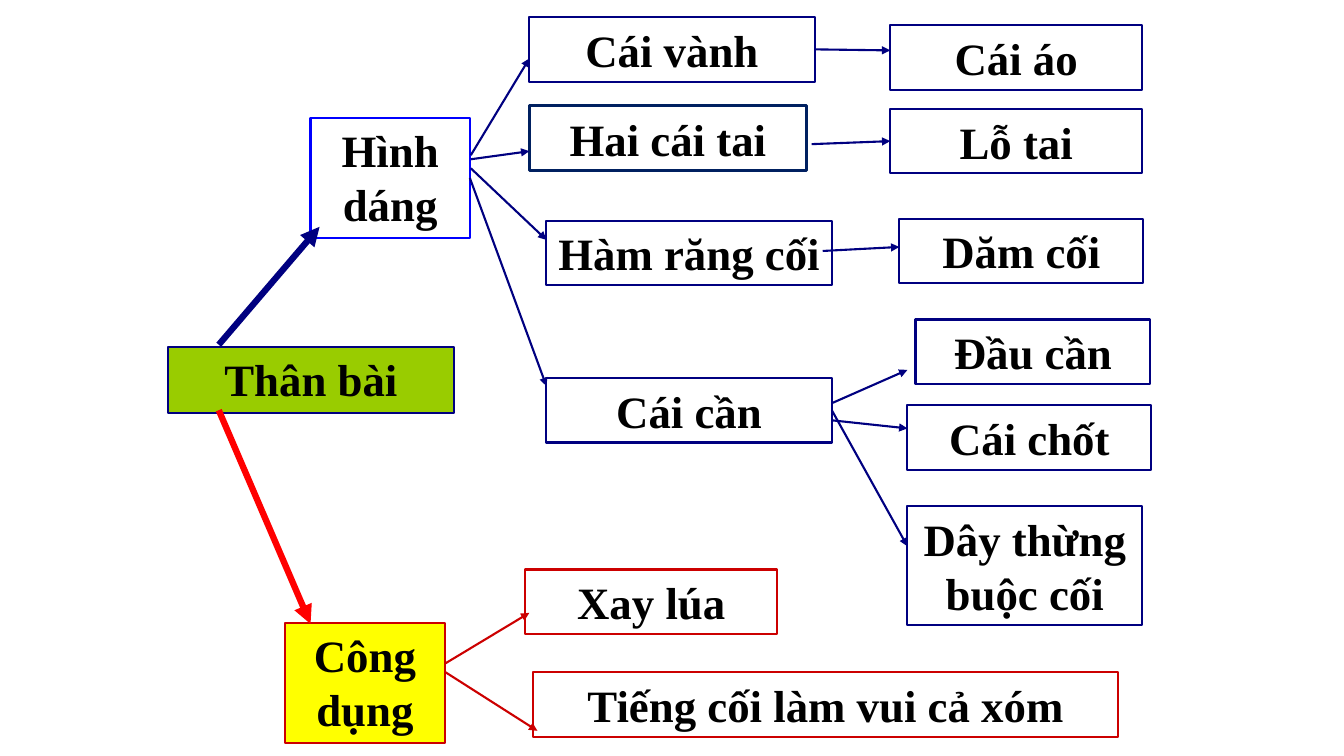
from dataclasses import dataclass

from lxml import etree
from pptx import Presentation
from pptx.dml.color import RGBColor
from pptx.enum.shapes import MSO_CONNECTOR, MSO_SHAPE
from pptx.enum.text import MSO_ANCHOR, MSO_AUTO_SIZE, PP_ALIGN
from pptx.oxml.ns import qn
from pptx.util import Inches, Pt

RECTANGLE = MSO_SHAPE.RECTANGLE
STRAIGHT = MSO_CONNECTOR.STRAIGHT
TOP, MIDDLE = MSO_ANCHOR.TOP, MSO_ANCHOR.MIDDLE
GROW = MSO_AUTO_SIZE.SHAPE_TO_FIT_TEXT
CENTER = PP_ALIGN.CENTER
LEFT_SIDE, RIGHT_SIDE = 1, 3
ONE_LINE = 0.64


@dataclass(frozen=True)
class Theme:
    font: str = "Times New Roman"
    text_size: int = 32
    text: str = "000000"
    navy: str = "000080"
    dark_navy: str = "002060"
    blue: str = "0000FF"
    crimson: str = "CC0000"
    red: str = "FF0000"
    green: str = "99CC00"
    yellow: str = "FFFF00"
    white: str = "FFFFFF"
    thin: float = 1.5
    medium: float = 2.25
    thick: float = 4.5


class MindMap:
    def __init__(self, slide, theme):
        self.slide = slide
        self.theme = theme

    def box(self, text, left, top, width, height=ONE_LINE, line=None,
            fill=None, weight=None, anchor=MIDDLE):
        theme = self.theme
        shape = self.slide.shapes.add_shape(
            RECTANGLE, Inches(left), Inches(top), Inches(width), Inches(height))
        shape.shadow.inherit = False
        if fill:
            shape.fill.solid()
            shape.fill.fore_color.rgb = RGBColor.from_string(fill)
        else:
            shape.fill.background()
        shape.line.color.rgb = RGBColor.from_string(line or theme.navy)
        shape.line.width = Pt(weight or theme.thin)
        frame = shape.text_frame
        frame.word_wrap = True
        frame.auto_size = GROW
        frame.vertical_anchor = anchor
        paragraph = frame.paragraphs[0]
        paragraph.alignment = CENTER
        run = paragraph.add_run()
        run.text = text
        run.font.name = theme.font
        run.font.size = Pt(theme.text_size)
        run.font.bold = True
        run.font.color.rgb = RGBColor.from_string(theme.text)
        return shape

    def arrow(self, start, end, color=None, weight=None, source=None, target=None):
        """Draw an arrow; source and target are boxes joined at right and left."""
        connector = self.slide.shapes.add_connector(
            STRAIGHT, *(Inches(value) for value in (*start, *end)))
        if source is not None:
            connector.begin_connect(source, RIGHT_SIDE)
        if target is not None:
            connector.end_connect(target, LEFT_SIDE)
        connector.line.color.rgb = RGBColor.from_string(color or self.theme.navy)
        connector.line.width = Pt(weight or self.theme.thin)
        properties = connector.line._get_or_add_ln()
        etree.SubElement(properties, qn("a:tailEnd"), type="triangle")
        etree.SubElement(connector._element.spPr, qn("a:effectLst"))


def main():
    presentation = Presentation()
    presentation.slide_width = Inches(13.33)
    presentation.slide_height = Inches(7.5)
    theme = Theme()
    mind_map = MindMap(
        presentation.slides.add_slide(presentation.slide_layouts[6]), theme)
    box, arrow = mind_map.box, mind_map.arrow

    # Main topic and its two branches
    box("Thân bài", 1.67, 3.44, 2.83, 0.66, fill=theme.green, anchor=TOP)
    appearance = box("Hình dáng", 3.08, 1.17, 1.58, 1.19,
                     line=theme.blue, anchor=TOP)
    box("Công dụng", 2.83, 6.18, 1.58, 1.19,
        line=theme.crimson, fill=theme.yellow, anchor=TOP)

    # Parts of the mill
    rim = box("Cái vành", 5.25, 0.17, 2.83, fill=theme.white)
    box("Hai cái tai", 5.25, 1.05, 2.75, line=theme.dark_navy, weight=theme.medium)
    box("Hàm răng cối", 5.42, 2.19, 2.83)
    handle = box("Cái cần", 5.42, 3.75, 2.83)

    # Details of the parts
    box("Cái áo", 8.83, 0.25, 2.5)
    ear_hole = box("Lỗ tai", 8.83, 1.08, 2.5)
    box("Dăm cối", 8.92, 2.17, 2.42)
    box("Đầu cần", 9.08, 3.17, 2.33)
    box("Cái chốt", 9, 4.02, 2.42)
    box("Dây thừng buộc cối", 9, 5.02, 2.33, 1.18)

    # Uses of the mill
    box("Xay lúa", 5.21, 5.65, 2.5, line=theme.crimson)
    box("Tiếng cối làm vui cả xóm", 5.29, 6.67, 5.8, line=theme.crimson)

    # Arrows from the main topic
    arrow((2.17, 3.42), (3.17, 2.25), weight=theme.thick)
    arrow((2.17, 4.07), (3.08, 6.19), theme.red, theme.thick)

    # Arrows from the appearance branch to the parts
    for start_y, end in ((1.54, (5.25, 0.58)), (1.58, (5.25, 1.5)),
                         (1.67, (5.42, 2.38))):
        arrow((4.67, start_y), end)
    arrow((4.67, 1.75), (5.42, 3.83), source=appearance)

    # Arrows from the parts to their details
    arrow((8.08, 0.5), (8.83, 0.5), source=rim)
    arrow((8.05, 1.43), (8.83, 1.42), target=ear_hole)
    arrow((8.16, 2.49), (8.92, 2.45))
    arrow((8.25, 4), (9, 3.67))
    arrow((8.25, 4.17), (9, 4.25))
    arrow((8.25, 4.08), (9, 5.42), source=handle)

    # Arrows from the uses branch
    arrow((4.42, 6.58), (5.25, 6.08), theme.crimson)
    arrow((4.42, 6.67), (5.33, 7.25), theme.crimson)

    presentation.save("out.pptx")


if __name__ == "__main__":
    main()
